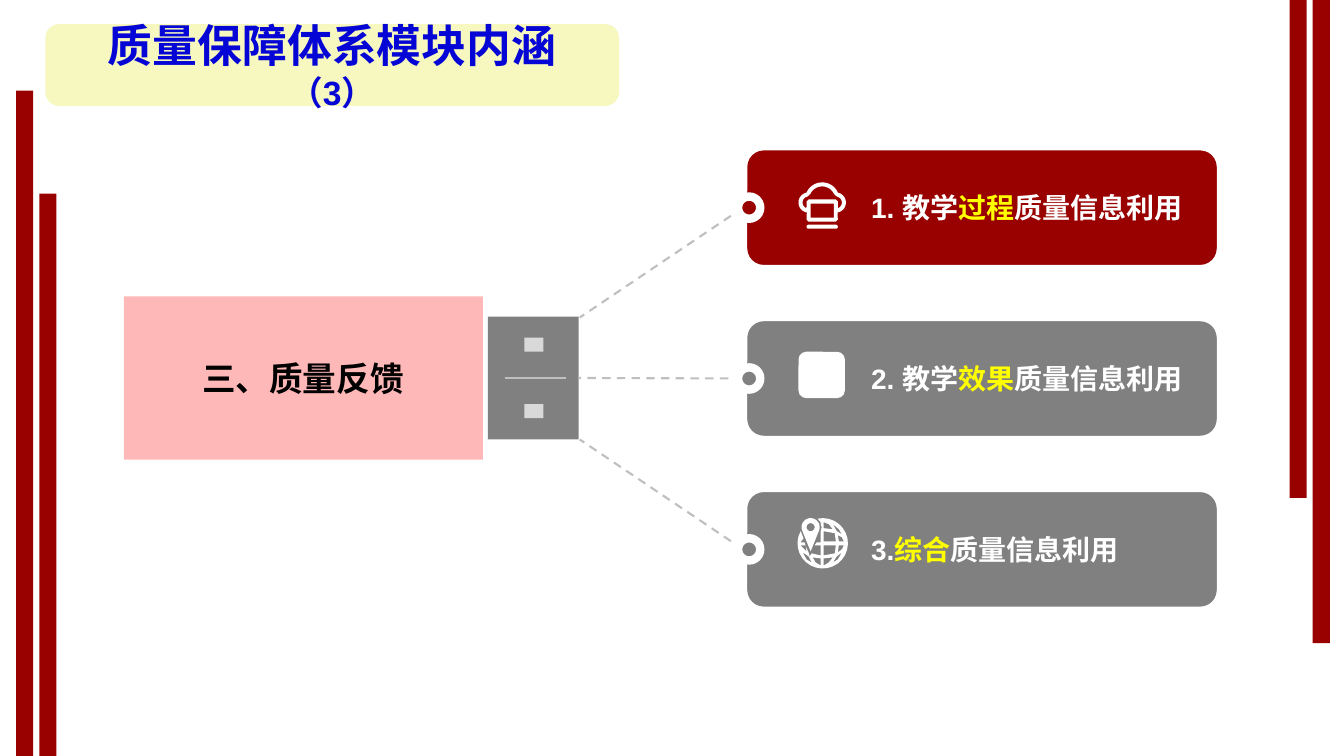
"""Build the slide on quality feedback with three uses of quality information."""
from math import cos, radians, sin

from lxml.etree import SubElement
from pptx import Presentation
from pptx.dml.color import RGBColor
from pptx.enum.dml import MSO_LINE
from pptx.enum.shapes import MSO_CONNECTOR, MSO_SHAPE as SHAPE
from pptx.enum.text import MSO_ANCHOR, MSO_AUTO_SIZE, PP_ALIGN
from pptx.oxml.ns import qn
from pptx.util import Inches, Pt

COLORS = {
    "red": "990000", "gray": "808080", "pink": "FFB8B8", "cream": "F6F8BF",
    "dash": "BFBFBF", "contact": "D9D9D9", "white": "FFFFFF",
    "yellow": "FFFF00", "blue": "0505D5", "black": "000000",
}
CJK_FONT = "Noto Sans CJK SC"


def block(kind, box, fill, outline=None):
    shape = slide.shapes.add_shape(kind, *map(Inches, box))
    shape.shadow.inherit = False
    shape.fill.solid()
    shape.fill.fore_color.rgb = RGBColor.from_string(COLORS[fill])
    if outline:
        shape.line.color.rgb = RGBColor.from_string(COLORS[outline])
        shape.line.width = Pt(6)
    else:
        shape.line.fill.background()
    return shape


def write(frame, runs, font="Arial", align=PP_ALIGN.LEFT, inset=0.08, wrap=False):
    frame.auto_size = MSO_AUTO_SIZE.NONE
    frame.word_wrap = wrap
    frame.vertical_anchor = MSO_ANCHOR.MIDDLE
    frame.margin_left = frame.margin_right = Inches(inset)
    frame.margin_top = frame.margin_bottom = 0
    paragraph = frame.paragraphs[0]
    paragraph.alignment = align
    for text, size, color in runs:
        run = paragraph.add_run()
        run.text = text
        run.font.size = Pt(size)
        run.font.bold = True
        run.font.color.rgb = RGBColor.from_string(COLORS[color])
        run.font.name = font
        SubElement(run._r.get_or_add_rPr(), qn("a:ea"), typeface=CJK_FONT)


prs = Presentation()
prs.slide_width, prs.slide_height = Inches(13.33), Inches(7.5)
slide = prs.slides.add_slide(prs.slide_layouts[5])

title_box = (0.45, 0.24, 5.69, 0.81)
banner = block(SHAPE.ROUNDED_RECTANGLE, title_box, "cream")
title = slide.shapes.title
title.element.addprevious(banner.element)
title.left, title.top, title.width, title.height = map(Inches, title_box)
write(title.text_frame, [("质量保障体系模块内涵", 32, "blue"), ("（3）", 24, "blue")],
      align=PP_ALIGN.CENTER, inset=0.3, wrap=True)

for left, top, height in [(0.16, 0.9, 6.6), (0.39, 1.92, 5.58),
                          (12.79, 0, 4.94), (13.02, 0, 6.38)]:
    block(SHAPE.RECTANGLE, (left, top, 0.17, height), "red")

block(SHAPE.RECTANGLE, (1.23, 2.94, 3.56, 1.62), "pink")
plug = block(SHAPE.RECTANGLE, (4.84, 3.14, 0.9, 1.22), "gray")
for top in (3.35, 4.01):
    block(SHAPE.RECTANGLE, (5.2, top, 0.19, 0.14), "contact")
stage = slide.shapes.add_textbox(*map(Inches, (1.69, 3.24, 2.63, 1.03)))
write(stage.text_frame, [("三、质量反馈", 24, "black")], font=CJK_FONT,
      align=PP_ALIGN.CENTER)

# Contours use hundredths of an inch; five numbers mean an arc: centre, radius, angles.
cloud = [
    [(10, 20, 10, 100, 260), (23.5, 17, 17, 205, 335), (37, 20, 10, 280, 440),
     (39, 37), (37, 39), (10, 39), (8, 37)],
    [(10, 20, 6, 110, 260), (23.5, 17, 13, 205, 335), (37, 20, 6, 280, 430),
     (39, 19), (37, 17), (10, 17), (8, 19)],
    [(12, 21), (35, 21), (35, 35), (12, 35)],
    [(10, 44, 2, 90, 270), (37, 44, 2, 270, 450)],
]
globe = [
    [(25, 25, 25, 258, 569), (6, 20), (3, 24), (7, 24), (8, 27), (3, 27), (9, 33),
     (8, 28), (11, 34), (12, 38), (14, 35), (23, 37), (23, 27), (17, 27), (19, 24),
     (23, 24), (23, 13), (24, 9), (23, 6), (23, 4)],
    [(35, 39), (26, 40), (26, 47), (31, 44)],
    [(15, 39), (23, 40), (23, 47), (18, 44)],
    [(44, 34), (39, 38), (35, 44), (40, 41)],
    [(5, 34), (11, 38), (14, 44), (9, 41)],
    [(41, 27), (40, 34), (44, 31), (46, 27)],
    [(26, 27), (26, 37), (37, 35), (38, 27)],
    [(40, 17), (41, 23), (46, 23), (44, 19)],
    [(26, 13), (26, 23), (38, 23), (37, 15)],
    [(35, 6), (39, 13), (44, 16), (41, 11)],
    [(26, 4), (26, 10), (35, 11), (31, 6)],
    [(13, 9, 9, 160, 380), (13, 33)],
    [(13, 9, 4, 0, 360)],
]

uses = [
    ("red", "1. 教学", "过程", cloud, (7.92, 1.81), 3.15),
    ("gray", "2. 教学", "效果", None, (7.92, 3.49), None),
    ("gray", "3.", "综合", globe, (7.91, 5.14), 4.36),
]
links = []
for row, (color, lead, focus, icon, icon_at, plug_y) in enumerate(uses):
    top = 1.45 + 1.695 * row
    card = block(SHAPE.ROUNDED_RECTANGLE, (7.37, top, 4.74, 1.22), color, "white")

    link = slide.shapes.add_connector(MSO_CONNECTOR.STRAIGHT, Inches(7.37), Inches(top + 0.61),
                                      Inches(5.75), Inches(plug_y or 3.75))
    link.begin_connect(card, 1)
    if plug_y is None:
        link.end_connect(plug, 3)
    links.append((link, 1.5, MSO_LINE.DASH))
    block(SHAPE.OVAL, (7.32, top + 0.5, 0.22, 0.22), color, "white")

    label = slide.shapes.add_textbox(*map(Inches, (8.56, top + 0.24, 3.3, 0.74)))
    write(label.text_frame, [(lead, 20, "white"), (focus, 20, "yellow"),
                             ("质量信息利用", 20, "white")])

    if icon is None:
        block(SHAPE.ROUNDED_RECTANGLE, (*icon_at, 0.46, 0.46), "white")
        continue
    outline = None
    for contour in icon:
        points = []
        for part in contour:
            if len(part) == 2:
                points.append((part[0] * 100, part[1] * 100))
                continue
            x, y, radius, start, end = part
            for step in range(25):
                angle = radians(start + (end - start) * step / 24)
                points.append(((x + radius * cos(angle)) * 100,
                               (y + radius * sin(angle)) * 100))
        if outline is None:
            outline = slide.shapes.build_freeform(*points[0], scale=Inches(1) / 10000)
        else:
            outline.move_to(*points[0])
        outline.add_line_segments(points[1:], close=True)
    drawing = outline.convert_to_shape(*map(Inches, icon_at))
    drawing.shadow.inherit = False
    drawing.fill.solid()
    drawing.fill.fore_color.rgb = RGBColor.from_string(COLORS["white"])
    drawing.line.fill.background()

seam = slide.shapes.add_connector(MSO_CONNECTOR.STRAIGHT, Inches(5.01), Inches(3.75),
                                  Inches(5.61), Inches(3.75))
links.append((seam, 1, MSO_LINE.SOLID))
for link, width, dash in links:
    link.line.color.rgb = RGBColor.from_string(COLORS["dash"])
    link.line.width = Pt(width)
    link.line.dash_style = dash
    SubElement(link.element.spPr, qn("a:effectLst"))

prs.save("out.pptx")
